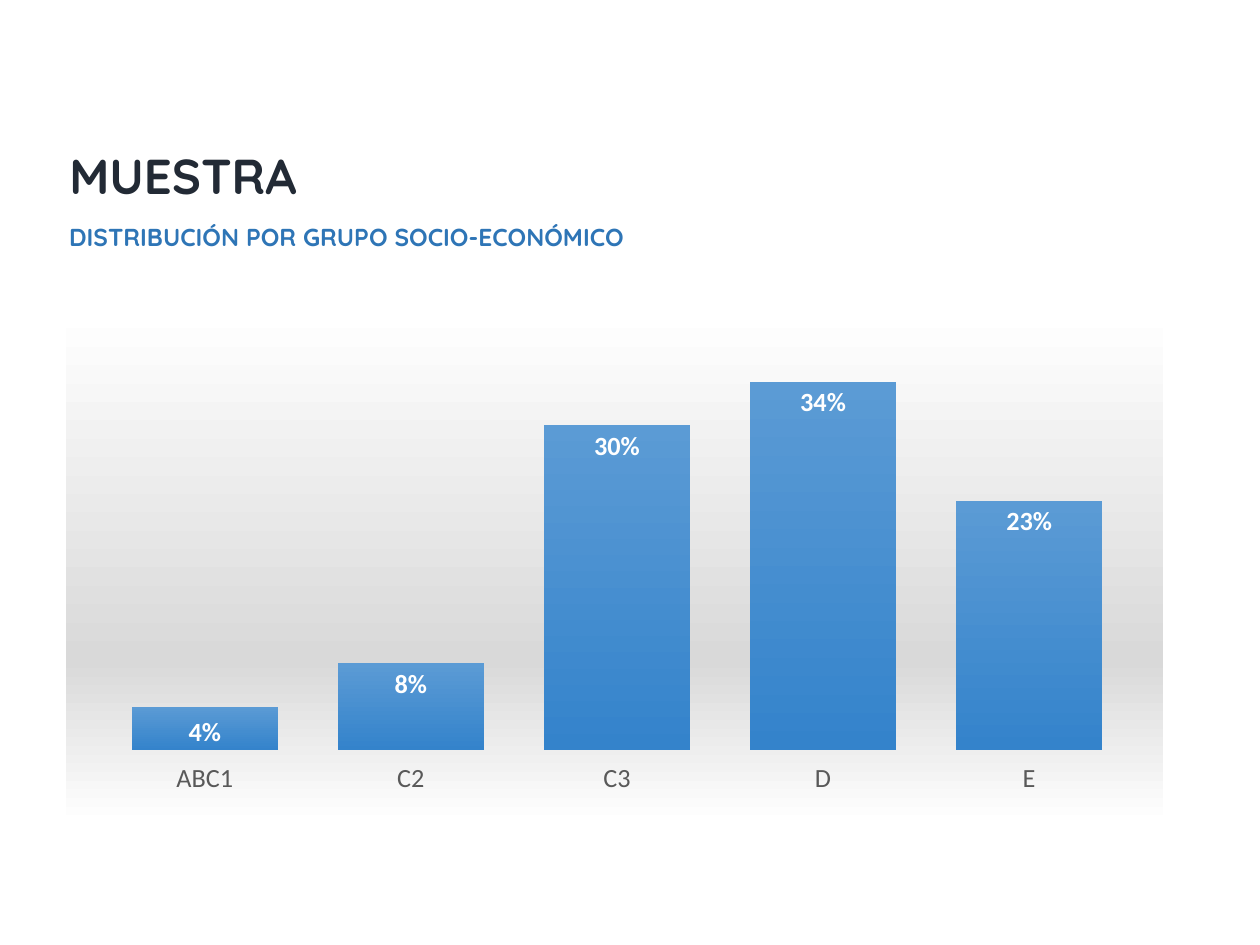
from lxml.etree import SubElement
from pptx import Presentation
from pptx.chart.data import CategoryChartData
from pptx.dml.color import RGBColor
from pptx.enum.chart import XL_CHART_TYPE, XL_LABEL_POSITION, XL_TICK_LABEL_POSITION, XL_TICK_MARK
from pptx.enum.text import MSO_ANCHOR, PP_ALIGN
from pptx.oxml import parse_xml
from pptx.oxml.ns import nsdecls, qn
from pptx.util import Inches, Pt

# Content
TITLE = "MUESTRA"
SUBTITLE = "DISTRIBUCIÓN POR GRUPO SOCIO-ECONÓMICO"
GROUPS = ["ABC1", "C2", "C3", "D", "E"]
SHARES = [0.04, 0.08, 0.30, 0.34, 0.23]

# Style
NAVY = RGBColor(0x22, 0x2A, 0x35)
BLUE = RGBColor(0x2E, 0x75, 0xB6)
GREY = RGBColor(0x59, 0x59, 0x59)
BLACK = RGBColor(0, 0, 0)
WHITE = RGBColor(0xFF, 0xFF, 0xFF)
BACKDROP = [(0, "FFFFFF"), (68, "D9D9D9"), (100, "FFFFFF")]
BAR_BLUES = [(0, "5B9BD5"), (100, "3483CB")]
PLOT = {"x": 0.033, "y": 0.014, "w": 0.939, "h": 0.842}


def set_font(font, size, color, name="Calibri", bold=False):
    font.size, font.name, font.bold = Pt(size), name, bold
    font.color.rgb = color


def write(sp, text, size, color, anchor=MSO_ANCHOR.TOP, spacing=None):
    tf = sp.text_frame
    tf.word_wrap = True
    tf.vertical_anchor = anchor
    p = tf.paragraphs[0]
    p.alignment = PP_ALIGN.LEFT
    p.line_spacing = spacing
    r = p.add_run()
    r.text = text
    set_font(r.font, size, color, "Quicksand", True)


def gradient_props(stops):
    """Shape properties with a top-to-bottom gradient and no outline."""
    gs = "".join(f'<a:gs pos="{pos * 1000}"><a:srgbClr val="{c}"/></a:gs>' for pos, c in stops)
    return parse_xml(
        f'<c:spPr {nsdecls("c", "a")}><a:gradFill><a:gsLst>{gs}</a:gsLst>'
        '<a:lin ang="5400000" scaled="0"/></a:gradFill><a:ln><a:noFill/></a:ln></c:spPr>')


def manual_layout(modes, **values):
    layout = parse_xml(f'<c:layout {nsdecls("c")}><c:manualLayout/></c:layout>')
    for tag, val in {**modes, **values}.items():
        SubElement(layout[0], qn(f"c:{tag}")).set("val", str(val))
    return layout


prs = Presentation()
prs.slide_width, prs.slide_height = Inches(10), Inches(7.5)
s = prs.slides.add_slide(prs.slide_layouts[5])

# Headings
title = s.shapes.title
title.left, title.top, title.width, title.height = map(Inches, (0.45, 1.13, 7.44, 0.58))
write(title, TITLE, 28, NAVY, anchor=MSO_ANCHOR.MIDDLE, spacing=0.9)
subtitle = s.shapes.add_textbox(*map(Inches, (0.45, 1.71, 5.92, 0.34)))
write(subtitle, SUBTITLE, 14, BLUE)

# Chart
data = CategoryChartData(number_format="0%")
data.categories = GROUPS
data.add_series("Series 1", SHARES)
chart = s.shapes.add_chart(XL_CHART_TYPE.COLUMN_CLUSTERED,
                           *map(Inches, (0.52, 2.46, 8.71, 4.08)), data).chart
chart.has_legend = chart.has_title = False
set_font(chart.font, 15, BLACK)
chart._chartSpace.find(qn("c:chart")).addnext(gradient_props(BACKDROP))

# Plot area position
area = chart._chartSpace.find(".//" + qn("c:plotArea"))
for old in area.findall(qn("c:layout")):
    area.remove(old)
area.insert(0, manual_layout({"layoutTarget": "inner", "xMode": "edge", "yMode": "edge"}, **PLOT))

# Axes
cat_axis, val_axis = chart.category_axis, chart.value_axis
cat_axis.major_tick_mark = cat_axis.minor_tick_mark = XL_TICK_MARK.NONE
cat_axis.tick_label_position = XL_TICK_LABEL_POSITION.LOW
cat_axis.format.line.fill.background()
set_font(cat_axis.tick_labels.font, 15, GREY)
val_axis.has_major_gridlines = False
val_axis.minimum_scale, val_axis.maximum_scale = 0, 0.4
val_axis.visible = False

# Bars and their labels
plot = chart.plots[0]
plot.gap_width = 41
plot.vary_by_categories = False
bars = plot.series[0]
bars.invert_if_negative = False
bars._element.find(qn("c:tx")).addnext(gradient_props(BAR_BLUES))
labels = bars.data_labels
labels.show_value = True
labels.number_format, labels.number_format_is_linked = "0%", False
labels.position = XL_LABEL_POSITION.INSIDE_END
set_font(labels.font, 15, WHITE, bold=True)

# The shortest bar carries its label slightly lower
low = bars.points[0].data_label
set_font(low.font, 15, WHITE, bold=True)
low.position = XL_LABEL_POSITION.INSIDE_END
idx = bars._element.find(".//" + qn("c:dLbl")).find(qn("c:idx"))
idx.addnext(manual_layout({}, x=0, y=0.01))

prs.save("out.pptx")
